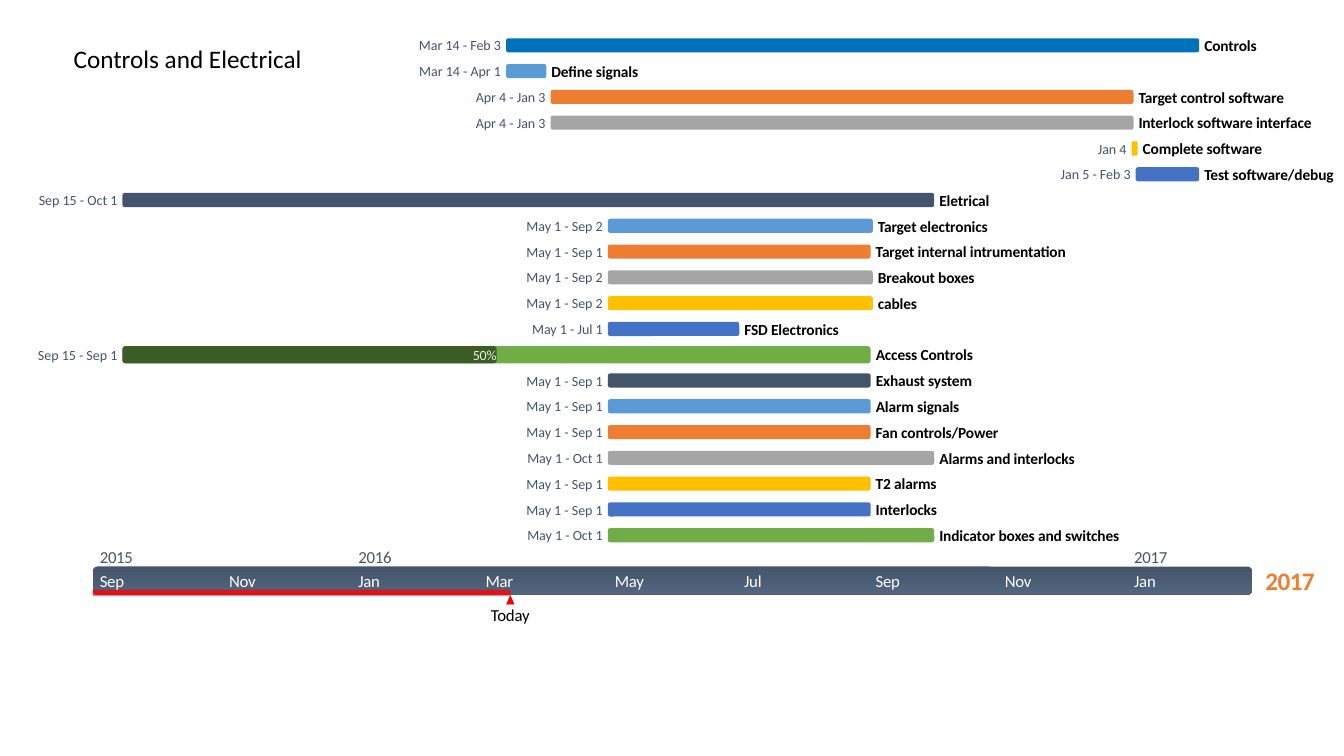
import itertools

import pptx
import pptx.chart.data
import pptx.dml.color
import pptx.enum.shapes
import pptx.enum.text
import pptx.oxml
import pptx.oxml.ns
import pptx.util

Inches = pptx.util.Inches
SHAPES = pptx.enum.shapes.MSO_SHAPE
ALIGN = pptx.enum.text.PP_ALIGN
MIDDLE = pptx.enum.text.MSO_ANCHOR.MIDDLE

COLOURS = {
    "navy": "0072BC", "sky": "5B9BD5", "orange": "ED7D31", "grey": "A5A5A5",
    "gold": "FFC000", "blue": "4472C4", "slate": "44546A", "steel": "52667F",
    "green": "70AD47", "red": "FF0000", "black": "000000", "white": "FFFFFF",
    "cream": "EEECE1",
}

TITLE = "Controls and Electrical"
# name, first day, last day (year, month, day), colour, share done
TASKS = [
    ("Controls", (2016, 3, 14), (2017, 2, 3), "navy", 0),
    ("Define signals", (2016, 3, 14), (2016, 4, 1), "sky", 0),
    ("Target control software", (2016, 4, 4), (2017, 1, 3), "orange", 0),
    ("Interlock software interface", (2016, 4, 4), (2017, 1, 3), "grey", 0),
    ("Complete software", (2017, 1, 4), (2017, 1, 4), "gold", 0),
    ("Test software/debug", (2017, 1, 5), (2017, 2, 3), "blue", 0),
    ("Eletrical", (2015, 9, 15), (2016, 10, 1), "slate", 0),
    ("Target electronics", (2016, 5, 1), (2016, 9, 2), "sky", 0),
    ("Target internal intrumentation", (2016, 5, 1), (2016, 9, 1), "orange", 0),
    ("Breakout boxes", (2016, 5, 1), (2016, 9, 2), "grey", 0),
    ("cables", (2016, 5, 1), (2016, 9, 2), "gold", 0),
    ("FSD Electronics", (2016, 5, 1), (2016, 7, 1), "blue", 0),
    ("Access Controls", (2015, 9, 15), (2016, 9, 1), "green", 0.5),
    ("Exhaust system", (2016, 5, 1), (2016, 9, 1), "slate", 0),
    ("Alarm signals", (2016, 5, 1), (2016, 9, 1), "sky", 0),
    ("Fan controls/Power", (2016, 5, 1), (2016, 9, 1), "orange", 0),
    ("Alarms and interlocks", (2016, 5, 1), (2016, 10, 1), "grey", 0),
    ("T2 alarms", (2016, 5, 1), (2016, 9, 1), "gold", 0),
    ("Interlocks", (2016, 5, 1), (2016, 9, 1), "blue", 0),
    ("Indicator boxes and switches", (2016, 5, 1), (2016, 10, 1), "green", 0),
]
TICKS = [(2015, 9), (2015, 11), (2016, 1), (2016, 3), (2016, 5),
         (2016, 7), (2016, 9), (2016, 11), (2017, 1)]
TODAY = (2016, 3, 16)
START, END = (2015, 9, 1), (2017, 3, 1)

MONTHS = "Jan Feb Mar Apr May Jun Jul Aug Sep Oct Nov Dec".split()
MONTH_STARTS = [0, *itertools.accumulate([31, 28, 31, 30, 31, 30, 31, 31, 30, 31, 30])]
AXIS_LEFT, AXIS_TOP, AXIS_WIDTH, AXIS_HEIGHT = 0.92, 5.62, 11.5, 0.28
FIRST_ROW, LAST_ROW = 0.45, 5.31  # centres of the bars
GAP = 0.05

STYLES = {
    "date": dict(size=10, colour="slate", align=ALIGN.RIGHT),
    "name": dict(size=11, colour="black", bold=True, spacing=-10),
    "done": dict(size=10, colour="cream", align=ALIGN.RIGHT, spacing=-10),
    "month": dict(size=12, colour="white", spacing=-20),
    "year": dict(size=12, colour="slate", spacing=-20),
    "today": dict(size=12, colour="black", align=ALIGN.CENTER, spacing=-10),
    "end": dict(size=18, colour="orange", bold=True, align=ALIGN.CENTER, spacing=-40),
}


def rgb(colour):
    return pptx.dml.color.RGBColor.from_string(COLOURS[colour])


def day_number(year, month, day):
    """Days on a running count in which February 29 falls in 2016 only."""
    leap = (year, month) >= (2016, 3)
    return (year - 2015) * 365 + MONTH_STARTS[month - 1] + day + leap


def date_x(date, extra_days=0):
    """Place of a date on the time axis, in inches."""
    first = day_number(*START)
    days = day_number(*date) + extra_days - first
    return AXIS_LEFT + AXIS_WIDTH * days / (day_number(*END) - first)


def date_text(date):
    return f"{MONTHS[date[1] - 1]} {date[2]}"


def add_text(page, words, left, centre, width, height, style):
    box = page.shapes.add_textbox(
        *map(Inches, (left, centre - height / 2, width, height)))
    frame = box.text_frame
    margins = dict.fromkeys(
        ("margin_left", "margin_top", "margin_right", "margin_bottom"), 0)
    for key, value in {**margins, "word_wrap": False, "vertical_anchor": MIDDLE}.items():
        setattr(frame, key, value)
    look = STYLES[style]
    para = frame.paragraphs[0]
    para.alignment = look.get("align", ALIGN.LEFT)
    span = para.add_run()
    span.text = words
    for key, value in {"name": "Calibri", "size": pptx.util.Pt(look["size"]),
                       "bold": look.get("bold", False)}.items():
        setattr(span.font, key, value)
    span.font.color.rgb = rgb(look["colour"])
    if "spacing" in look:
        span.font._element.set("spc", str(look["spacing"]))


def add_bar(page, left, centre, width, height, colour, opacity=100,
            shadow=False, kind=SHAPES.ROUNDED_RECTANGLE):
    bar = page.shapes.add_shape(
        kind, *map(Inches, (left, centre - height / 2, width, height)))
    bar.shadow.inherit = False
    bar.line.fill.background()
    bar.fill.solid()
    bar.fill.fore_color.rgb = rgb(colour)
    if opacity < 100:
        tint = bar._element.spPr.find(".//" + pptx.oxml.ns.qn("a:srgbClr"))
        add_alpha(tint, opacity)
    if shadow:
        effects = bar._element.spPr.find(pptx.oxml.ns.qn("a:effectLst"))
        cast = effects.makeelement(pptx.oxml.ns.qn("a:outerShdw"),
                                   {"blurRad": "0", "dist": "0", "dir": "0"})
        tint = cast.makeelement(pptx.oxml.ns.qn("a:srgbClr"), {"val": COLOURS["black"]})
        add_alpha(tint, 50)
        cast.append(tint)
        effects.append(cast)
    return bar


def add_alpha(tint, percent):
    tint.append(tint.makeelement(pptx.oxml.ns.qn("a:alpha"),
                                 {"val": str(percent * 1000)}))


def add_title(page):
    title = page.shapes.title
    place = dict(left=0.63, top=0.38, width=3.03, height=0.4)
    for key, value in place.items():
        setattr(title, key, Inches(value))
    title.text_frame.text = TITLE
    title.text_frame.auto_size = pptx.enum.text.MSO_AUTO_SIZE.NONE
    title.text_frame.vertical_anchor = MIDDLE
    para = title.text_frame.paragraphs[0]
    para.alignment = ALIGN.LEFT
    for key, value in {"name": "Calibri", "size": pptx.util.Pt(18)}.items():
        setattr(para.runs[0].font, key, value)
    para.runs[0].font.color.rgb = rgb("black")


def add_axis(page):
    middle = AXIS_TOP + AXIS_HEIGHT / 2
    band = add_bar(page, AXIS_LEFT, middle, AXIS_WIDTH, AXIS_HEIGHT, "slate")
    band.fill.gradient()
    band.fill.gradient_angle = 270
    for stop, colour, position in zip(band.fill.gradient_stops, ("slate", "steel"), (0, 1)):
        stop.color.rgb = rgb(colour)
        stop.position = position
    add_text(page, "2017", 12.55, middle, 0.49, 0.31, "end")

    today = date_x(TODAY)
    add_bar(page, AXIS_LEFT, 5.88, today - AXIS_LEFT, 0.06, "red", opacity=75)
    add_bar(page, today - 0.04, 5.95, 0.08, 0.09, "red", shadow=True,
            kind=SHAPES.ISOSCELES_TRIANGLE)
    add_text(page, "Today", today - 0.2, 6.1, 0.4, 0.2, "today")

    shown_year = None
    for year, month in TICKS:
        left = date_x((year, month, 1)) + 0.07
        add_text(page, MONTHS[month - 1], left, middle, 0.3, 0.19, "month")
        if year != shown_year:
            add_text(page, str(year), left, 5.52, 0.33, 0.2, "year")
            shown_year = year


def add_task(page, centre, name, first, last, colour, done):
    left, right = date_x(first), date_x(last, 1)
    spare = max(0, 0.06 - (right - left)) / 2
    left, right = left - spare, right + spare
    height = 0.17 if done else 0.14
    add_bar(page, left, centre, right - left, height, colour)
    if done:
        width = (right - left) * done
        add_bar(page, left, centre, width, height, "black", opacity=35, shadow=True)
        add_text(page, f"{done:.0%}", left + width - 0.25, centre, 0.25, 0.17, "done")
    dates = " - ".join(dict.fromkeys(map(date_text, (first, last))))
    width = 0.06 * len(dates)
    add_text(page, dates, left - GAP - width, centre, width, 0.17, "date")
    add_text(page, name, right + GAP, centre, 0.07 * len(name), 0.19, "name")


def main():
    deck = pptx.Presentation()
    deck.slide_width, deck.slide_height = Inches(13.33), Inches(7.5)
    page = deck.slides.add_slide(deck.slide_layouts[5])
    add_title(page)
    add_axis(page)
    pitch = (LAST_ROW - FIRST_ROW) / (len(TASKS) - 1)
    for row, task in enumerate(TASKS):
        add_task(page, FIRST_ROW + row * pitch, *task)
    deck.save("out.pptx")


if __name__ == "__main__":
    main()
